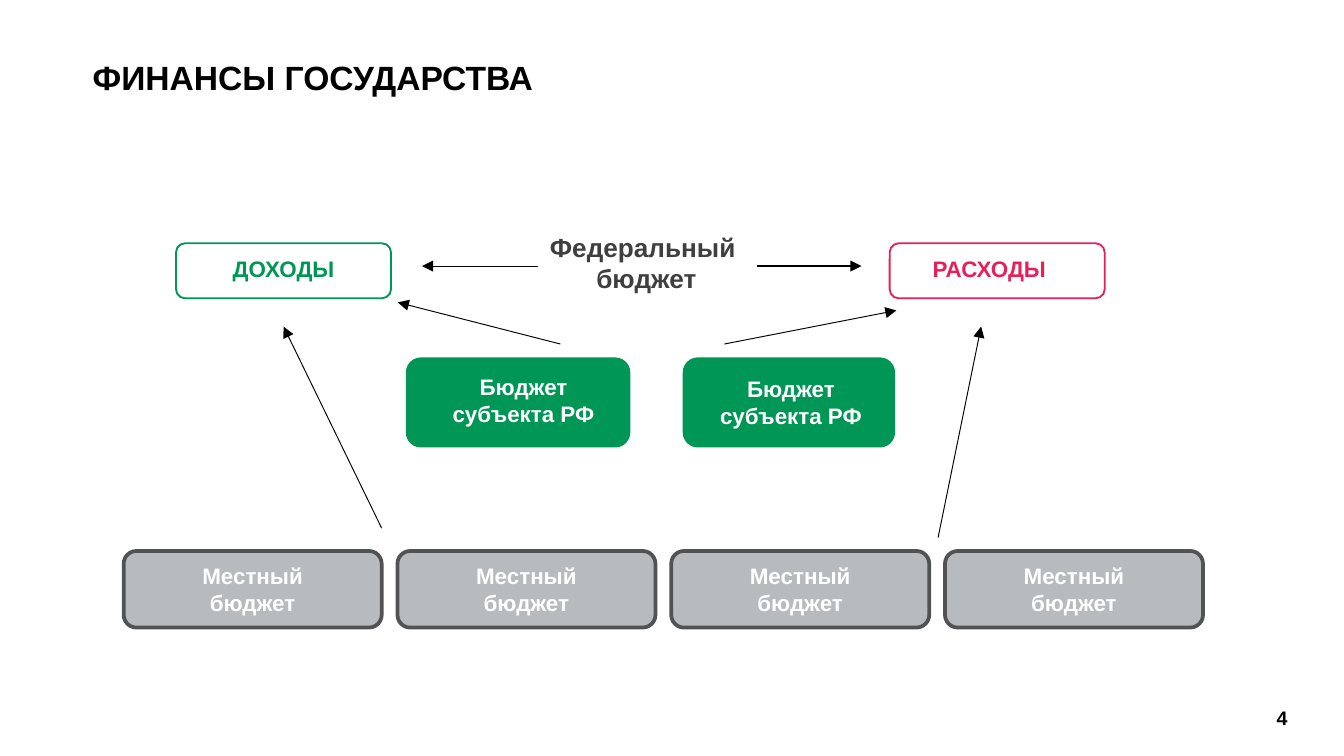
"""Build the slide on state finances: budgets linked to income and spending."""
import typing

import pptx
import pptx.dml.color
import pptx.enum.shapes
import pptx.enum.text
import pptx.oxml
import pptx.oxml.ns
import pptx.util

RGB = pptx.dml.color.RGBColor
GREEN = RGB(0x00, 0x96, 0x55)
PINK = RGB(0xE5, 0x20, 0x5A)
GREY = RGB(0xB7, 0xBB, 0xBE)
SLATE = RGB(0x50, 0x52, 0x53)
DARK = RGB(0x3F, 0x3F, 0x3F)
BLACK = RGB(0x00, 0x00, 0x00)
WHITE = RGB(0xFF, 0xFF, 0xFF)

WIDE = pptx.util.Inches(10)
HIGH = WIDE * 9 // 16
COLS = 100
CELL = WIDE / COLS

LEFT = pptx.enum.text.PP_ALIGN.LEFT
MID = pptx.enum.text.PP_ALIGN.CENTER
TOP = pptx.enum.text.MSO_ANCHOR.TOP
HALF = pptx.enum.text.MSO_ANCHOR.MIDDLE


class Area(typing.NamedTuple):
    """Place and size in grid columns and rows."""
    col: float
    row: float
    wide: float
    high: float


class Box(typing.NamedTuple):
    """Rounded box with optional fill and line."""
    area: Area
    fill: typing.Optional[RGB] = None
    line: typing.Optional[RGB] = None
    weight: float = 1


class Label(typing.NamedTuple):
    """Text with its look."""
    area: Area
    lines: typing.Tuple[str, ...]
    size: float
    color: RGB
    align: typing.Any = MID
    anchor: typing.Any = TOP
    inset: float = 0


class Arrow(typing.NamedTuple):
    """Line from start to a pointed end, in grid units."""
    start: typing.Tuple[float, float]
    end: typing.Tuple[float, float]
    weight: float = 0.5


def grid(*units: float) -> typing.List[int]:
    """Turn grid units into slide lengths."""
    return [round(unit * CELL) for unit in units]


def apply(target: typing.Any, values: typing.Dict[str, typing.Any]) -> None:
    """Set every attribute named in the format values."""
    for name, value in values.items():
        setattr(target, name, value)


def draw_box(shapes: typing.Any, box: Box) -> typing.Any:
    """Draw one rounded box."""
    kind = pptx.enum.shapes.MSO_SHAPE.ROUNDED_RECTANGLE
    shape = shapes.add_shape(kind, *grid(*box.area))
    shape.shadow.inherit = False
    for fill, color in ((shape.fill, box.fill), (shape.line.fill, box.line)):
        if color is None:
            fill.background()
        else:
            fill.solid()
            fill.fore_color.rgb = color
    if box.line is not None:
        shape.line.width = pptx.util.Pt(box.weight)
    return shape


def write(shape: typing.Any, label: Label) -> None:
    """Fill a shape with the text of a label."""
    frame = shape.text_frame
    inset = grid(label.inset)[0]
    apply(frame, {
        "word_wrap": True, "vertical_anchor": label.anchor,
        "margin_left": inset, "margin_right": inset,
        "margin_top": inset, "margin_bottom": inset,
    })
    for rank, line in enumerate(label.lines):
        para = frame.add_paragraph() if rank else frame.paragraphs[0]
        para.text = line
        para.alignment = label.align
        for run in para.runs:
            apply(run.font, {"name": "Arial", "bold": True,
                             "size": pptx.util.Pt(label.size)})
            run.font.color.rgb = label.color


def draw_label(shapes: typing.Any, label: Label) -> None:
    """Draw one text box."""
    write(shapes.add_textbox(*grid(*label.area)), label)


def draw_arrow(shapes: typing.Any, arrow: Arrow) -> None:
    """Draw one arrow with a triangle at its end."""
    kind = pptx.enum.shapes.MSO_CONNECTOR.STRAIGHT
    link = shapes.add_connector(kind, *grid(*arrow.start, *arrow.end))
    link.line.color.rgb = BLACK
    link.line.width = pptx.util.Pt(arrow.weight)
    space = pptx.oxml.ns.nsdecls("a")
    stroke = link.line._get_or_add_ln()
    stroke.append(pptx.oxml.parse_xml(f'<a:tailEnd {space} type="triangle"/>'))
    stroke.addnext(pptx.oxml.parse_xml(f"<a:effectLst {space}/>"))


REGION = ("Бюджет субъекта РФ",)

BOXES = (
    Box(Area(30.2, 26.6, 16.7, 6.7), fill=GREEN),
    Box(Area(50.8, 26.6, 15.8, 6.7), fill=GREEN),
    Box(Area(13.1, 18.1, 16, 4.1), line=GREEN),
    Box(Area(66.2, 18.1, 16, 4.1), line=PINK),
)

LABELS = (
    Label(Area(6.9, 4.2, 75.3, 7.5), ("ФИНАНСЫ ГОСУДАРСТВА",), 18, BLACK, LEFT),
    Label(Area(6.9, 19, 28.4, 2.3), ("ДОХОДЫ",), 12, GREEN),
    Label(Area(69.4, 19, 28.4, 2.3), ("РАСХОДЫ",), 12, PINK, LEFT),
    Label(Area(40.1, 17.2, 16, 5.4), ("Федеральный ", "бюджет"), 14, DARK),
    Label(Area(32, 27.8, 13.9, 4.4), REGION, 12, WHITE),
    Label(Area(51.9, 27.9, 13.9, 4.4), REGION, 12, WHITE),
    Label(Area(91.4, 51.9, 8, 3), ("4",), 10.5, BLACK, MID, HALF, 0.6),
)

ARROWS = (
    Arrow((56.3, 19.8), (64.1, 19.8), 0.75),
    Arrow((40, 19.8), (31.4, 19.8)),
    Arrow((41.7, 25.6), (29.6, 22.5)),
    Arrow((53.9, 25.6), (66.7, 23.1)),
    Arrow((28.4, 39.3), (21.1, 24.3)),
    Arrow((69.8, 40), (73, 24.3)),
)

LOCALS = 4
FIRST = Area(9.2, 41, 19.2, 5.7)
STEP = 20.37


def main() -> None:
    """Draw the slide and save it."""
    deck = pptx.Presentation()
    apply(deck, {"slide_width": WIDE, "slide_height": HIGH})
    shapes = deck.slides.add_slide(deck.slide_layouts[6]).shapes
    for box in BOXES:
        draw_box(shapes, box)
    for rank in range(LOCALS):
        area = FIRST._replace(col=FIRST.col + rank * STEP)
        shape = draw_box(shapes, Box(area, GREY, SLATE, 2))
        write(shape, Label(area, ("Местный\vбюджет",), 12, WHITE, MID, HALF, 0.5))
    for label in LABELS:
        draw_label(shapes, label)
    for arrow in ARROWS:
        draw_arrow(shapes, arrow)
    deck.save("out.pptx")


if __name__ == "__main__":
    main()
